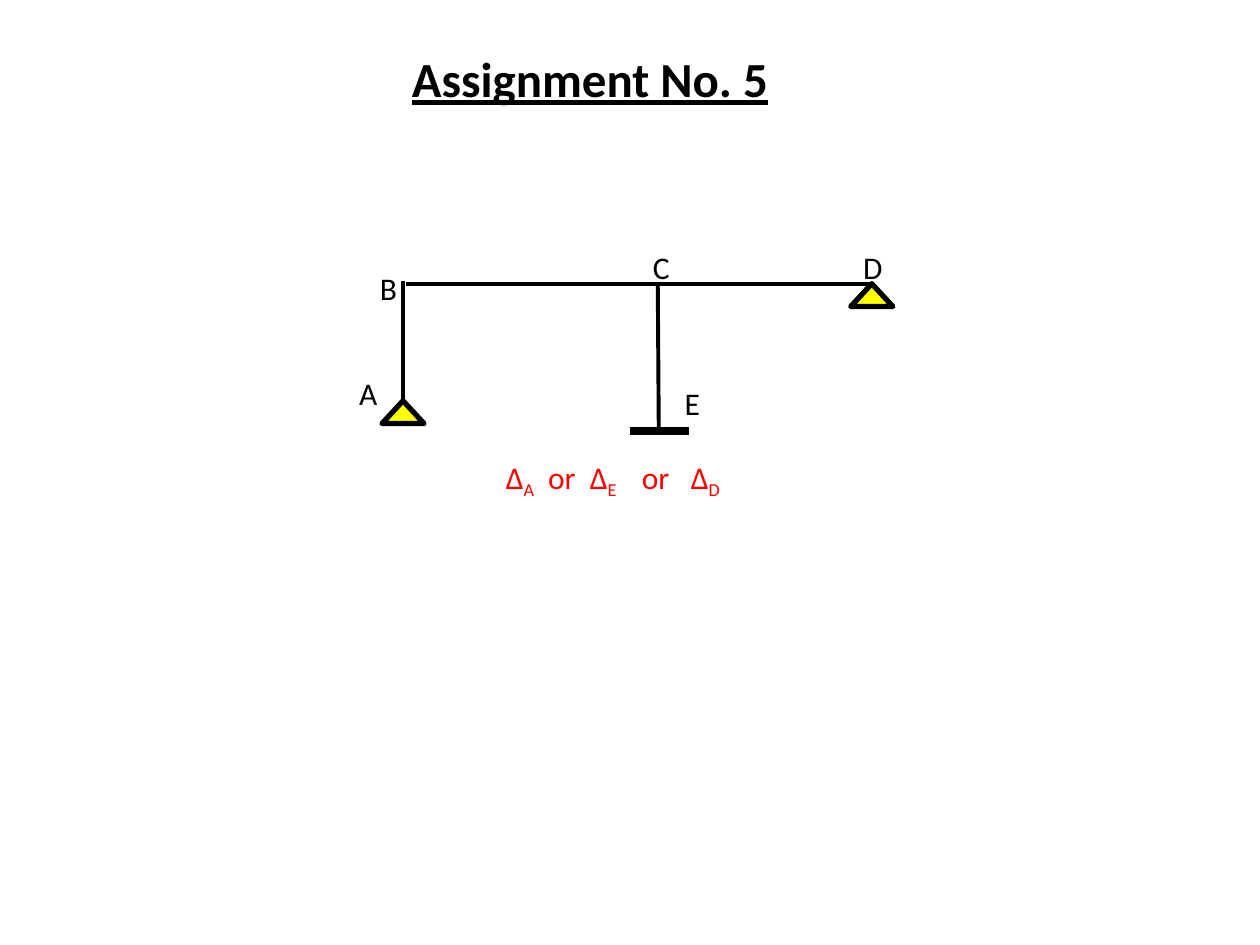
from pptx import Presentation
from pptx.dml.color import RGBColor
from pptx.enum.shapes import MSO_CONNECTOR, MSO_SHAPE
from pptx.enum.text import MSO_ANCHOR, PP_ALIGN
from pptx.oxml.ns import qn
from pptx.util import Cm, Pt
from lxml.etree import SubElement

INK = {"black": "000000", "yellow": "FFFF00", "red": "FF0000"}


def style(run, size, color):
    run.font.name = "Calibri"
    run.font.size = Pt(size)
    run.font.color.rgb = RGBColor.from_string(INK[color])


def add_box(left, top, width):
    box = slide.shapes.add_textbox(Cm(left), Cm(top), Cm(width), Cm(1.03))
    box.text_frame.word_wrap = True
    return box.text_frame.paragraphs[0]


deck = Presentation()
deck.slide_width, deck.slide_height = Cm(25.4), Cm(19.05)
slide = deck.slides.add_slide(deck.slide_layouts[5])

# Title
title = slide.shapes.title
title.left, title.top = Cm(8.05), Cm(0.85)
title.width, title.height = Cm(7.83), Cm(1.45)
frame = title.text_frame
frame.text = "Assignment No. 5"
frame.vertical_anchor = MSO_ANCHOR.TOP
frame.paragraphs[0].alignment = PP_ALIGN.LEFT
run = frame.paragraphs[0].runs[0]
style(run, 28, "black")
run.font.bold = run.font.underline = True

# Frame members and the fixed base at E: x1, y1, x2, y2, weight
members = [
    (8.18, 5.72, 17.57, 5.72, 2.25),
    (8.12, 5.66, 8.12, 8.05, 2.25),
    (13.26, 5.77, 13.28, 8.64, 2.25),
    (13.89, 8.69, 12.7, 8.69, 4.5),
]
for x1, y1, x2, y2, weight in members:
    bar = slide.shapes.add_connector(
        MSO_CONNECTOR.STRAIGHT, Cm(x1), Cm(y1), Cm(x2), Cm(y2))
    bar.line.color.rgb = RGBColor.from_string(INK["black"])
    bar.line.width = Pt(weight)
    SubElement(bar._element.spPr, qn("a:effectLst"))

# Pinned supports at D and A
for left, top in [(17.15, 5.72), (7.7, 8.08)]:
    pin = slide.shapes.add_shape(
        MSO_SHAPE.ISOSCELES_TRIANGLE, Cm(left), Cm(top), Cm(0.85), Cm(0.46))
    pin.shadow.inherit = False
    pin.fill.solid()
    pin.fill.fore_color.rgb = RGBColor.from_string(INK["yellow"])
    pin.line.color.rgb = RGBColor.from_string(INK["black"])
    pin.line.width = Pt(3)

# Joint labels
joints = {"A": (6.99, 7.41), "B": (7.41, 5.29), "E": (13.55, 7.62),
          "C": (12.91, 4.87), "D": (17.15, 4.87)}
for name, (left, top) in joints.items():
    label = add_box(left, top, 0.85)
    label.text = name
    style(label.runs[0], 18, "black")

# Wanted deflections, spaced by tab stops
line = add_box(9.95, 9.1, 5.72)
stops = SubElement(line._p.get_or_add_pPr(), qn("a:tabLst"))
for pos in (0.85, 1.69, 2.74, 3.73):
    SubElement(stops, qn("a:tab"), pos=str(Cm(pos)), algn="l")
for lead, joint in [("Δ", "A"), ("\tor\tΔ", "E"), ("\tor\tΔ", "D")]:
    for text in (lead, joint):
        run = line.add_run()
        run.text = text
        style(run, 18, "red")
    run.font._element.set("baseline", "-25000")

deck.save("out.pptx")
